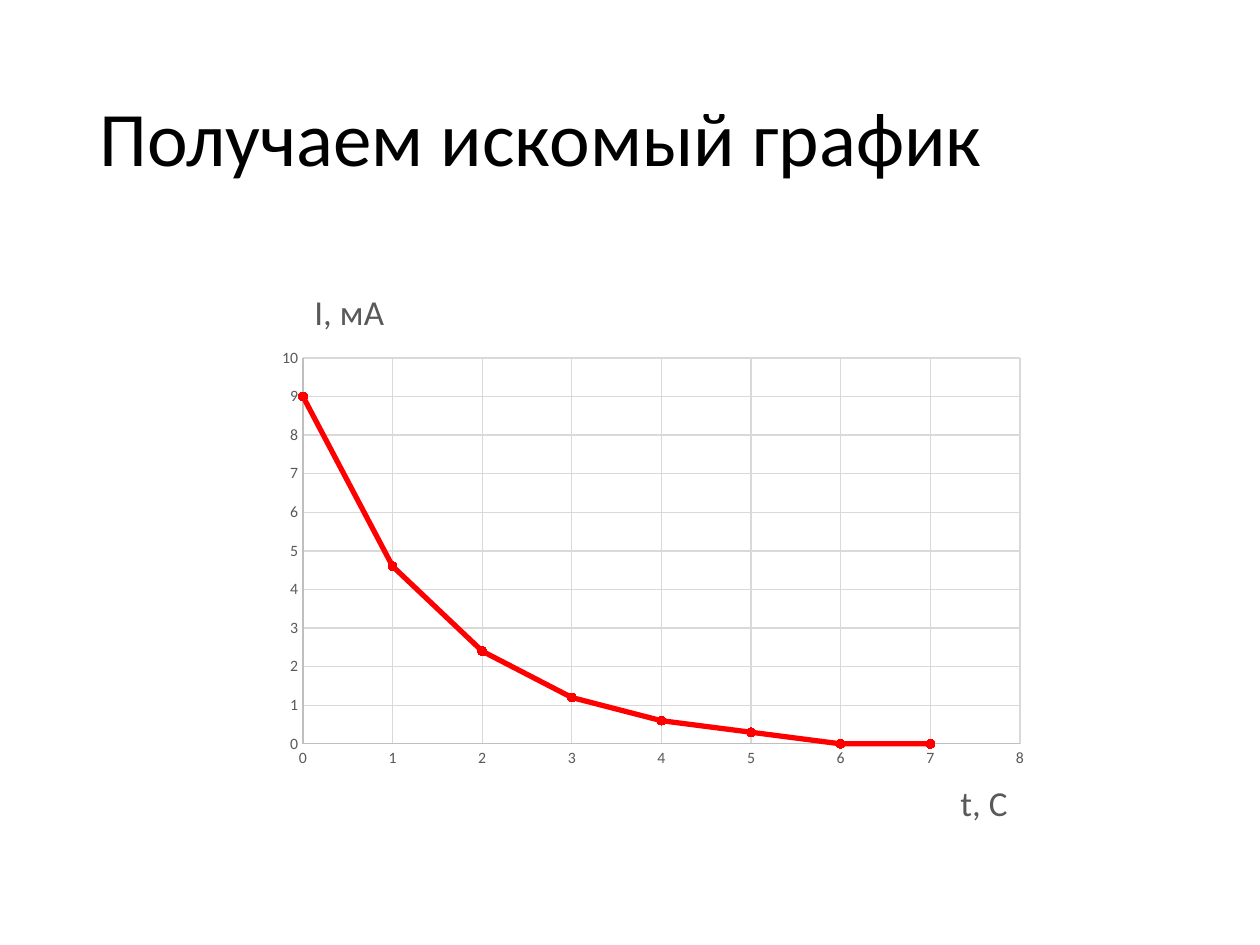
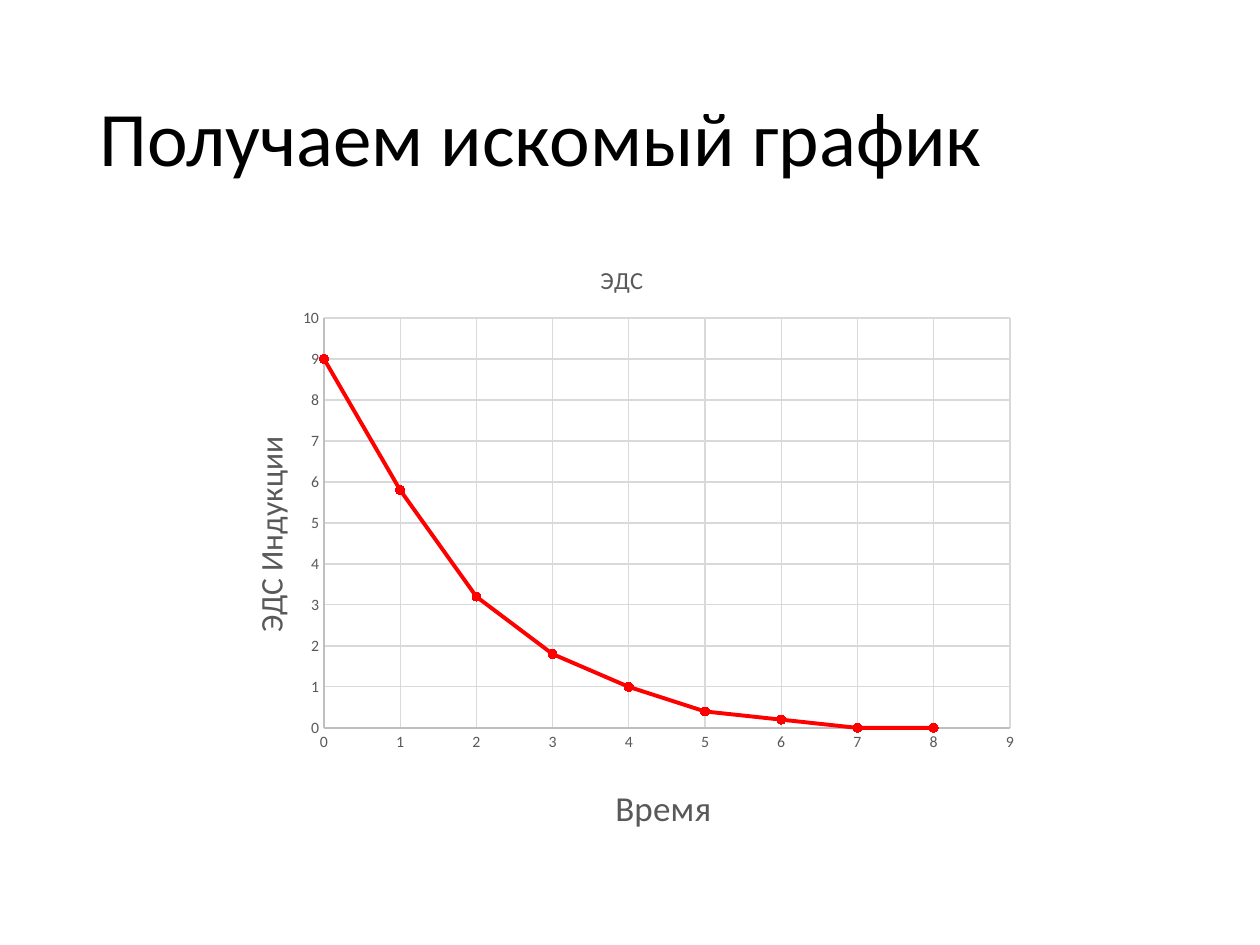
import dataclasses
from typing import Any, Optional

import lxml.etree
import pptx
import pptx.chart.data
import pptx.dml.color
import pptx.enum.chart
import pptx.enum.text
import pptx.oxml.ns
import pptx.util

RGBColor = pptx.dml.color.RGBColor
Pt = pptx.util.Pt
qn = pptx.oxml.ns.qn

BLACK = RGBColor(0x00, 0x00, 0x00)
RED = RGBColor(0xFF, 0x00, 0x00)
GRAY = RGBColor(0x59, 0x59, 0x59)
AXIS_GRAY = RGBColor(0xBF, 0xBF, 0xBF)
GRID_GRAY = RGBColor(0xD9, 0xD9, 0xD9)
FONT = "Calibri"
PX = 914400 / 126


@dataclasses.dataclass(frozen=True)
class Box:
    x: int
    y: int
    w: int
    h: int

    def emu(self) -> tuple[pptx.util.Emu, ...]:
        return tuple(px(n) for n in (self.x, self.y, self.w, self.h))


@dataclasses.dataclass(frozen=True)
class Label:
    text: str
    size: int
    x: int
    y: int
    vertical: bool = False


@dataclasses.dataclass(frozen=True)
class Graph:
    frame: Box
    plot: Box
    title: Label
    x_title: Label
    y_title: Optional[Label]
    values: tuple[float, ...]
    line_width: float


SLIDE_TITLE = "Получаем искомый график"
TITLE_BOX = Box(87, 50, 1086, 183)
Y_MAX = 10
GRAPHS = (
    Graph(
        frame=Box(267, 254, 772, 602),
        plot=Box(303, 358, 717, 386),
        title=Label("I, мА", 20, 308, 281),
        x_title=Label("t, C", 20, 954, 772),
        y_title=None,
        values=(9, 4.6, 2.4, 1.2, 0.6, 0.3, 0, 0),
        line_width=3,
    ),
    Graph(
        frame=Box(208, 233, 823, 616),
        plot=Box(324, 318, 686, 410),
        title=Label("ЭДС", 14, 596, 259),
        x_title=Label("Время", 20, 609, 777),
        y_title=Label("ЭДС Индукции", 18, 243, 431, vertical=True),
        values=(9, 5.8, 3.2, 1.8, 1, 0.4, 0.2, 0, 0),
        line_width=2.25,
    ),
)


def px(n: int) -> pptx.util.Emu:
    return pptx.util.Emu(round(n * PX))


def style_font(font: Any, size: float, color: RGBColor) -> None:
    font.name = FONT
    font.size = Pt(size)
    font.bold = False
    font.color.rgb = color


def style_line(line: Any, color: RGBColor, width: float) -> None:
    line.color.rgb = color
    line.width = Pt(width)


def place(el: Any, index: int, frame: Box, x: int, y: int,
          size: Optional[tuple[int, int]] = None) -> None:
    for old in el.findall(qn("c:layout")):
        el.remove(old)
    layout = lxml.etree.Element(qn("c:layout"))
    manual = lxml.etree.SubElement(layout, qn("c:manualLayout"))
    settings: dict[str, Any] = {"layoutTarget": "inner"} if size else {}
    settings |= {
        "xMode": "edge",
        "yMode": "edge",
        "x": (x - frame.x) / frame.w,
        "y": (y - frame.y) / frame.h,
    }
    if size:
        settings |= {"w": size[0] / frame.w, "h": size[1] / frame.h}
    for name, val in settings.items():
        lxml.etree.SubElement(manual, qn(f"c:{name}")).set("val", str(val))
    el.insert(index, layout)


def set_title(title: Any, label: Label, frame: Box) -> None:
    tf = title.text_frame
    tf.text = label.text
    style_font(tf.paragraphs[0].font, label.size, GRAY)
    if label.vertical:
        body = title._element.find(".//" + qn("a:bodyPr"))
        body.set("rot", "-5400000")
        body.set("vert", "horz")
    place(title._element, 1, frame, label.x, label.y)


def style_axis(axis: Any, maximum: int, label: Optional[Label], frame: Box) -> None:
    axis.minimum_scale = 0
    axis.maximum_scale = maximum
    axis.major_unit = 1
    axis.major_tick_mark = pptx.enum.chart.XL_TICK_MARK.NONE
    axis.minor_tick_mark = pptx.enum.chart.XL_TICK_MARK.NONE
    axis.has_major_gridlines = True
    style_line(axis.major_gridlines.format.line, GRID_GRAY, 0.75)
    style_line(axis.format.line, AXIS_GRAY, 0.75)
    style_font(axis.tick_labels.font, 9, GRAY)
    axis.has_title = label is not None
    if label:
        set_title(axis.axis_title, label, frame)


def add_title(slide: Any) -> None:
    sp = slide.shapes.add_textbox(*TITLE_BOX.emu())
    tf = sp.text_frame
    tf.word_wrap = True
    tf.vertical_anchor = pptx.enum.text.MSO_ANCHOR.MIDDLE
    p = tf.paragraphs[0]
    p.text = SLIDE_TITLE
    p.line_spacing = 0.9
    style_font(p.font, 44, BLACK)


def add_graph(slide: Any, graph: Graph) -> None:
    data = pptx.chart.data.XyChartData()
    points = data.add_series(graph.title.text)
    for x, y in enumerate(graph.values):
        points.add_data_point(x, y)
    chart = slide.shapes.add_chart(
        pptx.enum.chart.XL_CHART_TYPE.XY_SCATTER_SMOOTH, *graph.frame.emu(), data
    ).chart
    style_font(chart.font, 10, BLACK)
    chart.has_legend = False
    chart.has_title = True
    set_title(chart.chart_title, graph.title, graph.frame)
    style_axis(chart.category_axis, len(graph.values), graph.x_title, graph.frame)
    style_axis(chart.value_axis, Y_MAX, graph.y_title, graph.frame)

    plot = chart.plots[0]
    plot.vary_by_categories = False
    series = plot.series[0]
    series.smooth = True
    style_line(series.format.line, RED, graph.line_width)
    marker = series.marker
    marker.style = pptx.enum.chart.XL_MARKER_STYLE.CIRCLE
    marker.size = 5
    marker.format.fill.solid()
    marker.format.fill.fore_color.rgb = RED
    style_line(marker.format.line, RED, 0.75)

    area = chart._chartSpace.find(".//" + qn("c:plotArea"))
    box = graph.plot
    place(area, 0, graph.frame, box.x, box.y, (box.w, box.h))


def main() -> None:
    prs = pptx.Presentation()
    prs.slide_width = px(1260)
    prs.slide_height = px(945)
    for graph in GRAPHS:
        slide = prs.slides.add_slide(prs.slide_layouts[6])
        add_title(slide)
        add_graph(slide, graph)
    prs.save("out.pptx")


if __name__ == "__main__":
    main()
